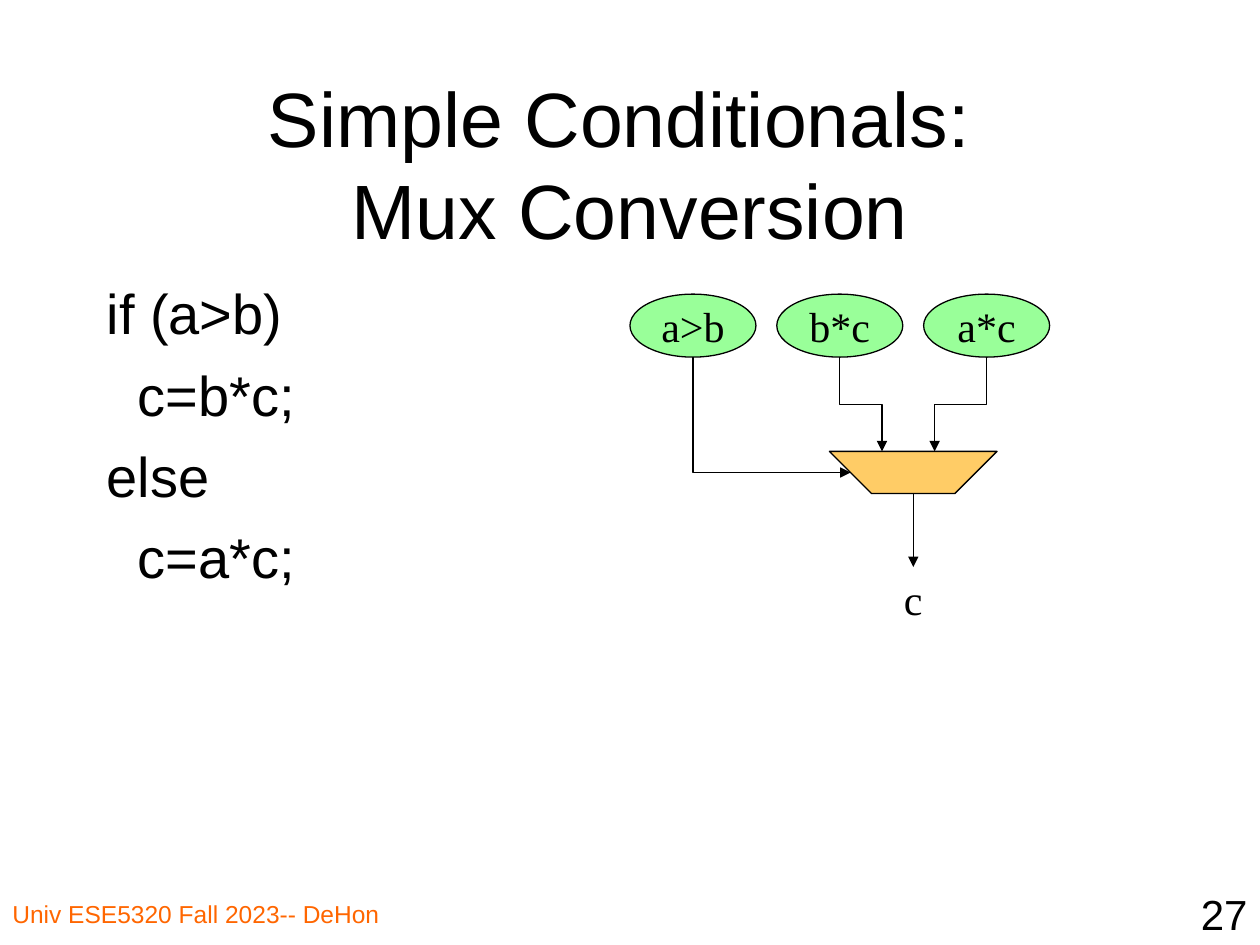
from pptx import Presentation
from pptx.dml.color import RGBColor
from pptx.enum.shapes import MSO_CONNECTOR, MSO_SHAPE
from pptx.enum.text import MSO_ANCHOR, PP_ALIGN
from pptx.oxml.ns import qn
from pptx.util import Cm, Pt
from lxml.etree import SubElement

LEFT, CENTER, RIGHT = PP_ALIGN.LEFT, PP_ALIGN.CENTER, PP_ALIGN.RIGHT
TOP, MIDDLE = MSO_ANCHOR.TOP, MSO_ANCHOR.MIDDLE
STRAIGHT, ELBOW = MSO_CONNECTOR.STRAIGHT, MSO_CONNECTOR.ELBOW
OVAL = MSO_SHAPE.OVAL


def color(value):
    return RGBColor.from_string(value)


class Canvas:
    sans = "Arial"
    serif = "Times New Roman"
    ink = "000000"
    accent = "FF6600"
    node_fill = "99FF99"
    mux_fill = "FFCC66"
    stroke = Pt(0.75)

    def __init__(self, page):
        self.page = page

    def add_span(self, para, text, size, font, ink):
        span = para.add_run()
        span.text = text
        span.font.size = Pt(size)
        span.font.name = font
        span.font.color.rgb = color(ink)

    def text(self, area, lines, size, font=sans, ink=ink, align=LEFT, anchor=TOP, wrap=True):
        box = self.page.shapes.add_textbox(*map(Cm, area))
        frame = box.text_frame
        frame.word_wrap = wrap
        frame.vertical_anchor = anchor
        para = frame.paragraphs[0]
        para.alignment = align
        for index, line in enumerate(lines):
            if index:
                para.add_line_break()
            self.add_span(para, line, size, font, ink)

    def code(self, area, lines, size, indent, gap):
        box = self.page.shapes.add_textbox(*map(Cm, area))
        frame = box.text_frame
        frame.word_wrap = True
        for index, (depth, line) in enumerate(lines):
            para = frame.add_paragraph() if index else frame.paragraphs[0]
            para.space_before = Pt(gap)
            para._p.get_or_add_pPr().set("marL", str(Cm(depth * indent)))
            self.add_span(para, line, size, self.sans, self.ink)

    def paint(self, shape, fill):
        shape.shadow.inherit = False
        shape.fill.solid()
        shape.fill.fore_color.rgb = color(fill)
        shape.line.color.rgb = color(self.ink)
        shape.line.width = self.stroke

    def node(self, area, label):
        shape = self.page.shapes.add_shape(OVAL, *map(Cm, area))
        self.paint(shape, self.node_fill)
        frame = shape.text_frame
        frame.word_wrap = False
        frame.vertical_anchor = MIDDLE
        para = frame.paragraphs[0]
        para.alignment = CENTER
        self.add_span(para, label, 24, self.serif, self.ink)

    def mux(self, left, top, width, height):
        right, bottom = left + width, top + height
        corners = [(right, top), (right - height, bottom), (left + height, bottom)]
        builder = self.page.shapes.build_freeform(Cm(left), Cm(top))
        builder.add_line_segments([(Cm(x), Cm(y)) for x, y in corners])
        self.paint(builder.convert_to_shape(), self.mux_fill)

    def arrow(self, start, end, kind=STRAIGHT):
        line = self.page.shapes.add_connector(kind, *map(Cm, start + end))
        line.line.color.rgb = color(self.ink)
        line.line.width = self.stroke
        SubElement(line.line._get_or_add_ln(), qn("a:tailEnd"), type="triangle")
        SubElement(line._element.spPr, qn("a:effectLst"))
        return line

    def elbow(self, start, end, preset="bentConnector3"):
        (x1, y1), (x2, y2) = start, end
        middle_x, middle_y = (x1 + x2) / 2, (y1 + y2) / 2
        half_run, half_rise = (y2 - y1) / 2, abs(x2 - x1) / 2
        line = self.arrow(
            (middle_x - half_run, middle_y - half_rise),
            (middle_x + half_run, middle_y + half_rise),
            ELBOW,
        )
        rightward = x2 > x1
        properties = line._element.spPr
        frame = properties.find(qn("a:xfrm"))
        frame.set("rot", str((270 if rightward else 90) * 60000))
        if rightward:
            frame.set("flipH", "1")
        properties.find(qn("a:prstGeom")).set("prst", preset)


def main():
    deck = Presentation()
    deck.slide_width, deck.slide_height = Cm(25.4), Cm(19.05)
    canvas = Canvas(deck.slides.add_slide(deck.slide_layouts[6]))

    canvas.text((0, 17.99, 9.74, 1.06), ["Univ ESE5320 Fall 2023-- DeHon"], 14, ink=canvas.accent)
    canvas.text((20.11, 17.78, 5.29, 1.27), ["27"], 24, align=RIGHT)
    canvas.text((1.9, 1.69, 21.6, 3.18), ["Simple Conditionals: ", "Mux Conversion"], 44,
                align=CENTER, anchor=MIDDLE)
    code = [(0, "if (a>b)"), (1, "c=b*c;"), (0, "else"), (1, "c=a*c;")]
    canvas.code((1.9, 5.5, 21.6, 11.43), code, 32, indent=0.63, gap=8)

    node_left, node_top, node_width, node_height, pitch = 12.7, 5.93, 2.54, 1.27, 2.96
    ports = []
    for index, label in enumerate(["a>b", "b*c", "a*c"]):
        left = node_left + index * pitch
        canvas.node((left, node_top, node_width, node_height), label)
        ports.append((left + node_width / 2, node_top + node_height))

    mux_left, mux_top, mux_width, mux_height = 16.72, 9.1, 3.38, 0.85
    canvas.mux(mux_left, mux_top, mux_width, mux_height)
    mux_center, mux_bottom = mux_left + mux_width / 2, mux_top + mux_height
    select, first, second = ports
    canvas.elbow(select, (mux_left + mux_height / 2, mux_top + mux_height / 2), "bentConnector2")
    canvas.elbow(first, (mux_center - 0.63, mux_top))
    canvas.elbow(second, (mux_center + 0.43, mux_top))

    result_top = 11.43
    canvas.arrow((mux_center, mux_bottom), (mux_center, result_top))
    canvas.text((mux_center - 0.44, result_top, 0.88, 1.27), ["c"], 24, canvas.serif, wrap=False)

    deck.save("out.pptx")


if __name__ == "__main__":
    main()
